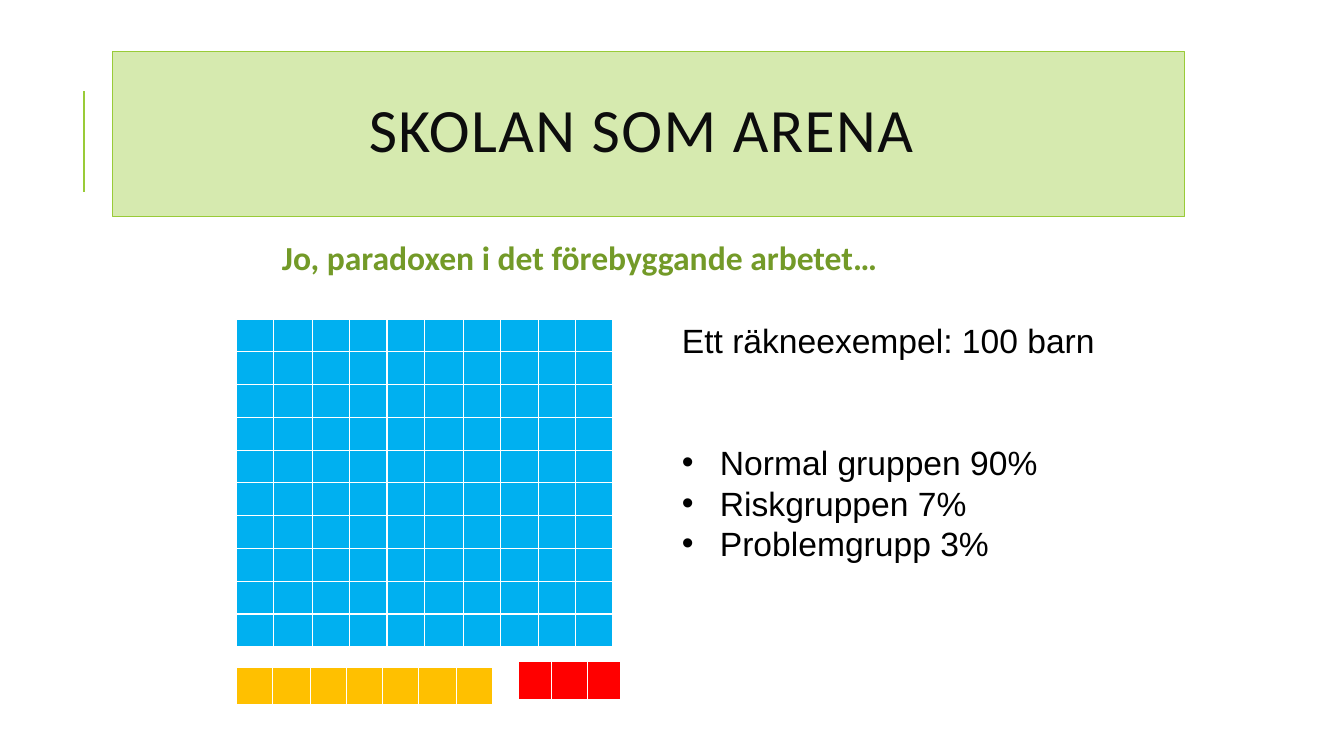
import pptx
import pptx.dml.color
import pptx.enum.shapes
import pptx.enum.text
import pptx.oxml
import pptx.oxml.ns
import pptx.util
from dataclasses import dataclass

TITLE = "SKOLAN SOM ARENA "
SUBTITLE = "Jo, paradoxen i det förebyggande arbetet…"
EXAMPLE = "Ett räkneexempel: 100 barn"
GROUPS = ["Normal gruppen 90%", "Riskgruppen 7%", "Problemgrupp 3%"]

# Lengths in px; a box is left, top, width, height
PAGE_SIZE = (1344, 756)
TITLE_BOX = (113, 52, 1072, 165)
SUBTITLE_BOX = (272, 230, 829, 54)
LIST_BOX = (672, 315, 453, 254)
ACCENT_LINE = (84, 192, 84, 91)
BULLET_INDENT = 38
WIDE_COLUMNS = (1, 5)
WIDE_EXTRA = 2


@dataclass(frozen=True)
class Theme:
    title_font: str = "Calibri"
    body_font: str = "Arial"
    title_size: int = 44
    body_size: int = 24
    line_pitch: int = 29
    accent: str = "99CB38"
    panel: str = "D6EAAF"
    title: str = "0D0D0D"
    subtitle: str = "739A28"
    body: str = "000000"
    border: str = "FFFFFF"
    normal: str = "00B0F0"
    risk: str = "FFC000"
    problem: str = "FF0000"


THEME = Theme()
# rows, columns, box, colour
GRIDS = [
    (10, 10, (236, 319, 377, 328), THEME.normal),
    (1, 7, (236, 667, 257, 38), THEME.risk),
    (1, 3, (518, 661, 103, 39), THEME.problem),
]


def px(length):
    return pptx.util.Emu(round(length * 914400 / 100.8))


def colour(value):
    return pptx.dml.color.RGBColor.from_string(value)


def add_span(para, text, font, size, fill, bold=False):
    span = para.add_run()
    span.text = text
    span.font.name = font
    span.font.size = pptx.util.Pt(size)
    span.font.bold = bold
    span.font.color.rgb = colour(fill)
    return span


def add_border(cell):
    properties = cell._tc.get_or_add_tcPr()
    for side in "LRTB":
        properties.append(pptx.oxml.parse_xml(
            f'<a:ln{side} {pptx.oxml.ns.nsdecls("a")} w="12700"><a:solidFill>'
            f'<a:srgbClr val="{THEME.border}"/></a:solidFill></a:ln{side}>'))


def add_grid(page, rows, columns, box, fill):
    table = page.shapes.add_table(rows, columns, *map(px, box)).table
    table.first_row = table.horz_banding = False
    wide_count = sum(index < columns for index in WIDE_COLUMNS)
    narrow = (box[2] - wide_count * WIDE_EXTRA) / columns
    for index, column in enumerate(table.columns):
        column.width = px(narrow + WIDE_EXTRA * (index in WIDE_COLUMNS))
    for row in table.rows:
        row.height = px(box[3] / rows)
    for cell in table.iter_cells():
        cell.margin_left = cell.margin_right = 0
        cell.margin_top = cell.margin_bottom = 0
        add_border(cell)
        cell.fill.solid()
        cell.fill.fore_color.rgb = colour(fill)


def add_text_box(page, box):
    frame = page.shapes.add_textbox(*map(px, box)).text_frame
    frame.word_wrap = True
    return frame


def add_bullet(para):
    properties = para._p.get_or_add_pPr()
    properties.set("marL", str(px(BULLET_INDENT)))
    properties.set("indent", str(-px(BULLET_INDENT)))
    for tag in ('buFont typeface="Arial"', 'buChar char="•"'):
        properties.append(pptx.oxml.parse_xml(f'<a:{tag} {pptx.oxml.ns.nsdecls("a")}/>'))


def add_list(page):
    frame = add_text_box(page, LIST_BOX)
    frame.auto_size = pptx.enum.text.MSO_AUTO_SIZE.SHAPE_TO_FIT_TEXT
    for index, text in enumerate([EXAMPLE, *GROUPS]):
        para = frame.add_paragraph() if index else frame.paragraphs[0]
        para.line_spacing = pptx.util.Pt(THEME.line_pitch)
        if index == 1:
            para.space_before = pptx.util.Pt(2 * THEME.line_pitch)
        if index:
            add_bullet(para)
        add_span(para, text, THEME.body_font, THEME.body_size, THEME.body)


def add_subtitle(page):
    frame = add_text_box(page, SUBTITLE_BOX)
    frame.vertical_anchor = pptx.enum.text.MSO_ANCHOR.MIDDLE
    add_span(frame.paragraphs[0], SUBTITLE, THEME.title_font, THEME.body_size,
             THEME.subtitle, bold=True)


def add_title(page):
    panel = page.shapes.add_shape(
        pptx.enum.shapes.MSO_SHAPE.RECTANGLE, *map(px, TITLE_BOX))
    panel.shadow.inherit = False
    panel.fill.solid()
    panel.fill.fore_color.rgb = colour(THEME.panel)
    panel.line.color.rgb = colour(THEME.accent)
    panel.line.width = pptx.util.Pt(0.75)
    panel.text_frame.vertical_anchor = pptx.enum.text.MSO_ANCHOR.MIDDLE
    para = panel.text_frame.paragraphs[0]
    para.alignment = pptx.enum.text.PP_ALIGN.CENTER
    para.line_spacing = 0.8
    span = add_span(para, TITLE, THEME.title_font, THEME.title_size, THEME.title)
    span._r.get_or_add_rPr().set("spc", "100")


def add_accent_line(page):
    line = page.shapes.add_connector(
        pptx.enum.shapes.MSO_CONNECTOR.STRAIGHT, *map(px, ACCENT_LINE))
    line.line.color.rgb = colour(THEME.accent)
    line.line.width = pptx.util.Pt(1.5)
    line._element.spPr.append(
        pptx.oxml.parse_xml(f'<a:effectLst {pptx.oxml.ns.nsdecls("a")}/>'))


def main():
    deck = pptx.Presentation()
    deck.slide_width, deck.slide_height = map(px, PAGE_SIZE)
    page = deck.slides.add_slide(deck.slide_layouts[6])
    add_accent_line(page)
    for grid in GRIDS:
        add_grid(page, *grid)
    add_list(page)
    add_subtitle(page)
    add_title(page)
    deck.save("out.pptx")


if __name__ == "__main__":
    main()
